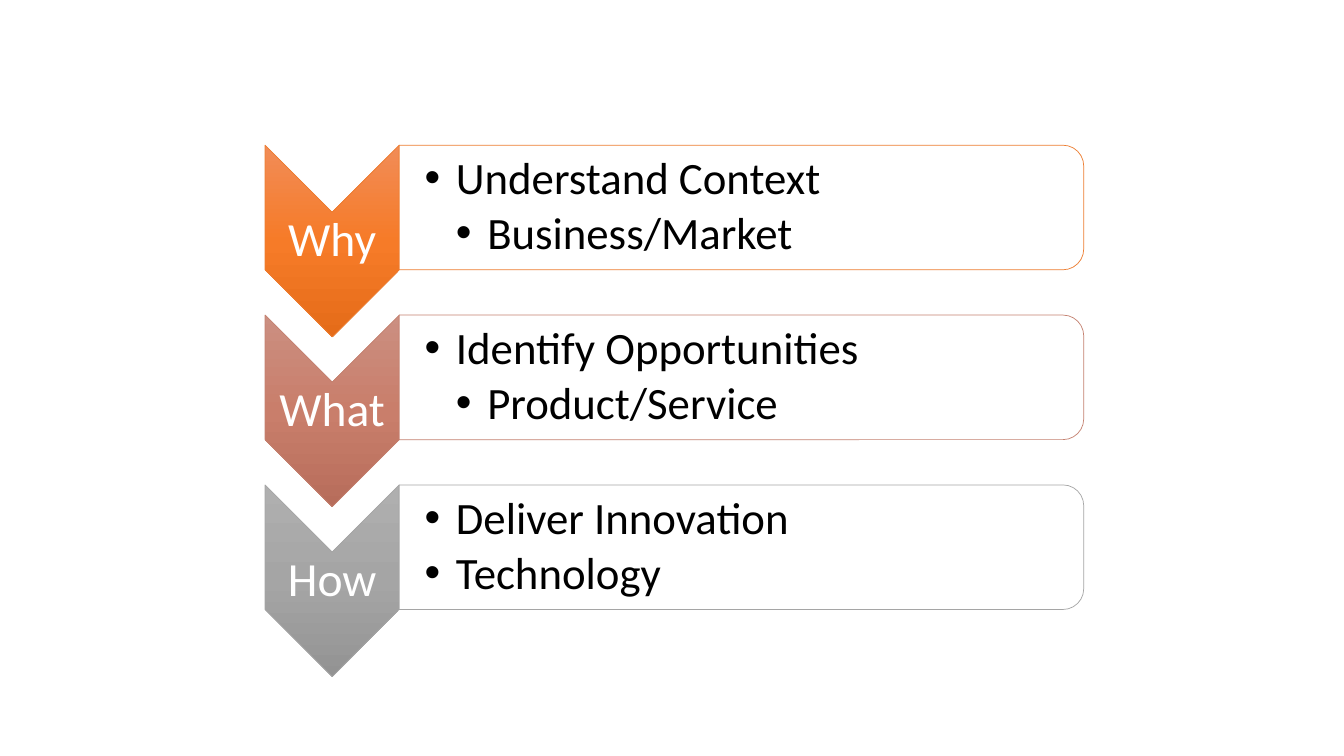
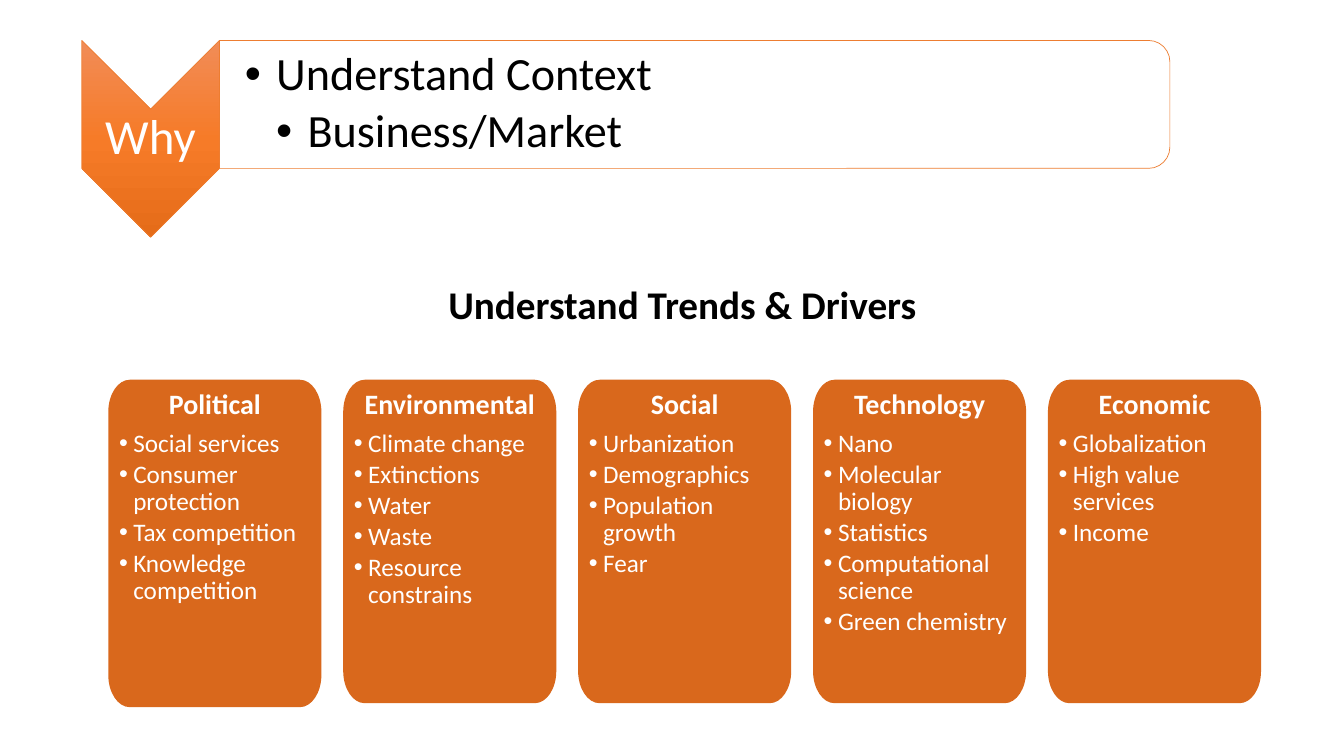
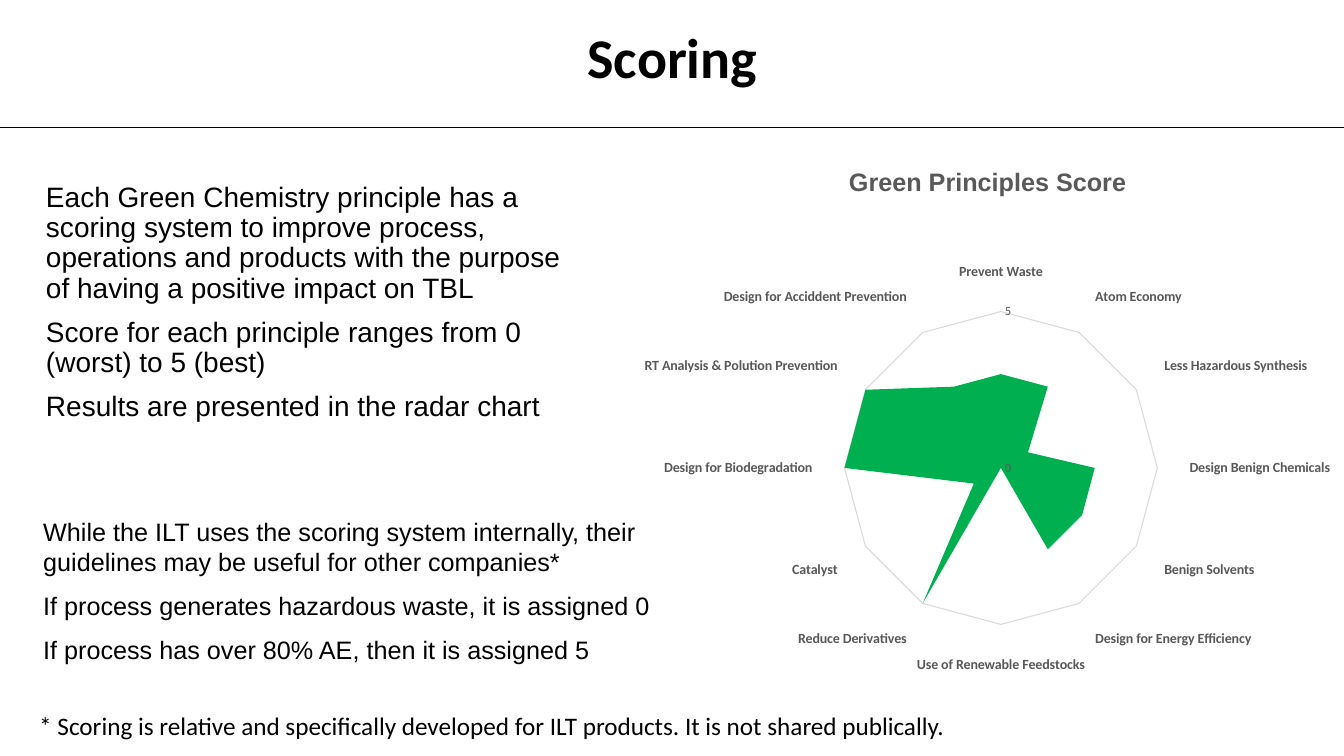
from lxml.etree import SubElement
from pptx import Presentation
from pptx.chart.data import CategoryChartData
from pptx.dml.color import RGBColor
from pptx.enum.chart import XL_CHART_TYPE, XL_TICK_MARK
from pptx.enum.shapes import MSO_CONNECTOR, MSO_SHAPE
from pptx.enum.text import MSO_ANCHOR, PP_ALIGN
from pptx.oxml.ns import qn
from pptx.util import Cm, Pt

WIDTH, HEIGHT = 33.87, 19.05
BLACK, WHITE, GREY, PALE = "000000", "FFFFFF", "595959", "D9D9D9"
CARD, GREEN = "D9681C", "00B050"
ORANGE = ("ED7D31", ("F18C57", "F67B28", "E56C19"))
ROSE = ("C48170", ("CB8F81", "C97E6B", "B76D5B"))
SILVER = ("A5A5A5", ("AFAFAF", "A5A5A5", "939393"))
WHY = ("Why", [("Understand Context", 1), ("Business/Market", 2)], ORANGE)
WHAT = ("What", [("Identify Opportunities", 1), ("Product/Service", 2)], ROSE)
HOW = ("How", [("Deliver Innovation", 1), ("Technology", 1)], SILVER)
TRENDS = {
    "Political": ["Social services", "Consumer protection", "Tax competition",
                  "Knowledge competition"],
    "Environmental": ["Climate change", "Extinctions", "Water", "Waste",
                      "Resource constrains"],
    "Social": ["Urbanization", "Demographics", "Population growth", "Fear"],
    "Technology": ["Nano", "Molecular biology", "Statistics",
                   "Computational science", "Green chemistry"],
    "Economic": ["Globalization", "High value services", "Income"],
}
SCORES = {
    "Prevent Waste": 3,
    "Atom Economy": 3,
    "Less Hazardous Synthesis": 1,
    "Design Benign Chemicals": 3,
    "Benign Solvents": 3,
    "Design for Energy Efficiency": 3,
    "Use of Renewable Feedstocks": 0,
    "Reduce Derivatives": 5,
    "Catalyst": 1,
    "Design for Biodegradation": 5,
    "RT Analysis & Polution Prevention": 5,
    "Design for Acciddent Prevention": 3,
}
PRINCIPLES = [
    "Each Green Chemistry principle has a scoring system to improve process, "
    "operations and products with the purpose of having a positive impact on TBL",
    "Score for each principle ranges from 0 (worst) to 5 (best)",
    "Results are presented in the radar chart",
]
GUIDELINES = [
    "While the ILT uses the scoring system internally, their guidelines may be "
    "useful for other companies*",
    "If process generates hazardous waste, it is assigned 0",
    "If process has over 80% AE, then it is assigned 5",
]


def rgb(value):
    """Turn a hex string into a colour."""
    return RGBColor.from_string(value)


class Deck:
    """Hold the shared style and the current slide."""

    font = "Calibri"

    def __init__(self):
        """Start an empty wide presentation."""
        self.prs = Presentation()
        self.prs.slide_width, self.prs.slide_height = Cm(WIDTH), Cm(HEIGHT)

    def new_slide(self):
        """Add a blank slide and make it current."""
        self.shapes = self.prs.slides.add_slide(self.prs.slide_layouts[6]).shapes

    def style_font(self, font, size, color, bold=False, name=None):
        """Apply face, size, colour and weight to a font."""
        font.name, font.size, font.bold = name or self.font, Pt(size), bold
        font.color.rgb = rgb(color)

    def frame(self, sp, insets=(0.25, 0.13, 0.25, 0.13), anchor=MSO_ANCHOR.TOP, wrap=True):
        """Prepare the text frame of a shape."""
        tf = sp.text_frame
        tf.word_wrap, tf.vertical_anchor = wrap, anchor
        tf.margin_left, tf.margin_top, tf.margin_right, tf.margin_bottom = map(Cm, insets)
        return tf

    def box(self, left, top, width, height, **options):
        """Add a text box and return its frame."""
        sp = self.shapes.add_textbox(Cm(left), Cm(top), Cm(width), Cm(height))
        return self.frame(sp, **options)

    def para(self, tf, text, size, color=BLACK, bold=False, name=None,
             align=PP_ALIGN.LEFT, spacing=1, before=0, after=0):
        """Write the next paragraph of a frame."""
        p = tf.add_paragraph() if tf.text else tf.paragraphs[0]
        p.text, p.alignment, p.line_spacing = text, align, spacing
        p.space_before, p.space_after = Pt(before), Pt(after)
        self.style_font(p.runs[0].font, size, color, bold, name)
        return p

    def bullet(self, tf, text, size, indent, level=1, color=BLACK):
        """Write a bulleted paragraph with a hanging indent."""
        p = self.para(tf, text, size, color, spacing=0.9, after=round(size * 0.15, 1))
        p.level = level
        pPr = p._p.get_or_add_pPr()
        pPr.set("marL", str(Cm(indent * level)))
        pPr.set("indent", str(-Cm(indent)))
        SubElement(pPr, qn("a:buFont")).set("typeface", "Arial")
        SubElement(pPr, qn("a:buChar")).set("char", "•")

    def label(self, tf, text, size, bold=False):
        """Write a centred white heading."""
        self.para(tf, text, size, WHITE, bold, align=PP_ALIGN.CENTER,
                  spacing=0.9, after=round(size * 0.35, 1))

    def turned(self, kind, left, top, width, height, line):
        """Add a shape turned by 90 degrees that fills the given area."""
        x, y = left + (width - height) / 2, top + (height - width) / 2
        sp = self.shapes.add_shape(kind, Cm(x), Cm(y), Cm(height), Cm(width))
        sp.rotation = 90
        sp.shadow.inherit = False
        sp.line.color.rgb, sp.line.width = rgb(line), Pt(0.5)
        return sp

    def gradient(self, sp, colors):
        """Fill a shape from top to bottom with evenly spaced colours."""
        sp.fill.gradient()
        grad = sp.element.spPr.find(qn("a:gradFill"))
        grad.set("rotWithShape", "0")
        grad.find(qn("a:lin")).set("ang", "5400000")
        stops = grad.find(qn("a:gsLst"))
        for stop in list(stops):
            stops.remove(stop)
        for i, color in enumerate(colors):
            stop = SubElement(stops, qn("a:gs"))
            stop.set("pos", str(100000 * i // (len(colors) - 1)))
            SubElement(stop, qn("a:srgbClr")).set("val", color)

    def step(self, left, top, length, panel_width, size, content):
        """Add a chevron with its label and a panel of bullets."""
        name, points, (line, colors) = content
        breadth, height, pad = length * 0.7, length * 0.65, 0.15
        chevron = self.turned(MSO_SHAPE.CHEVRON, left, top, breadth, length, line)
        self.gradient(chevron, colors)
        tf = self.box(left, top + breadth / 2, breadth, length - breadth,
                      insets=[0.05] * 4, anchor=MSO_ANCHOR.MIDDLE)
        self.label(tf, name, size)
        left += breadth
        panel = self.turned(MSO_SHAPE.ROUND_2_SAME_RECTANGLE, left, top,
                            panel_width, height, line)
        panel.fill.solid()
        panel.fill.fore_color.rgb = rgb(WHITE)
        tf = self.box(left, top + pad, panel_width - pad, height - 2 * pad,
                      insets=(0.64, 0.05, 0.05, 0.05), anchor=MSO_ANCHOR.MIDDLE)
        for text, level in points:
            self.bullet(tf, text, size - 2, 0.79, level)

    def rounded(self, left, top, width, height, rx, ry):
        """Add a freeform rectangle with elliptical corners."""
        x, y, w, h, rx, ry = map(Cm, (left, top, width, height, rx, ry))
        points = [(0, ry), (rx, 0), (w - rx, 0), (w, ry),
                  (w, h - ry), (w - rx, h), (rx, h), (0, h - ry)]
        builder = self.shapes.build_freeform(x, y + ry)
        builder.add_line_segments([(x + a, y + b) for a, b in points[1:]], close=True)
        sp = builder.convert_to_shape()
        lines = list(sp.element.iter(qn("a:lnTo")))
        corners = [(0, 0), (w, 0), (w, h), (0, h)]
        for i, corner in enumerate(corners):
            start, end, line = points[2 * i], points[2 * i + 1], lines[2 * i]
            curve = line.makeelement(qn("a:cubicBezTo"))
            for anchor, pull in ((start, 0.55), (end, 0.55), (end, 0)):
                pt = SubElement(curve, qn("a:pt"))
                for key, a, c in zip("xy", anchor, corner):
                    pt.set(key, str(round(a + pull * (c - a))))
            line.getparent().replace(line, curve)
        return sp

    def card(self, left, top, width, height, title, items):
        """Add a card with a heading and bullets."""
        sp = self.rounded(left, top, width, height, 0.54, 0.81)
        sp.shadow.inherit = False
        sp.fill.solid()
        sp.fill.fore_color.rgb = rgb(CARD)
        sp.line.fill.background()
        tf = self.frame(sp, insets=[0.27] * 4)
        self.label(tf, title, 20, True)
        for item in items:
            self.bullet(tf, item, 18, 0.36, color=WHITE)

    def rule(self, top):
        """Draw a thin line across the slide."""
        line = self.shapes.add_connector(MSO_CONNECTOR.STRAIGHT, 0, Cm(top), Cm(WIDTH), Cm(top))
        line.line.color.rgb, line.line.width = rgb(BLACK), Pt(0.5)
        SubElement(line._element.spPr, qn("a:effectLst"))

    def place(self, parent, before, **values):
        """Give a chart part a fixed position in fractions of the chart."""
        for old in parent.findall(qn("c:layout")):
            parent.remove(old)
        layout = SubElement(parent, qn("c:layout"))
        manual = SubElement(layout, qn("c:manualLayout"))
        for key, value in values.items():
            SubElement(manual, qn("c:" + key)).set("val", str(value))
        parent.find(qn(before)).addprevious(layout)

    def radar(self, left, top, width, height, title, scores):
        """Add a filled radar chart of scores from 0 to 5."""
        data = CategoryChartData()
        data.categories = list(scores)
        data.add_series("Series 1", list(scores.values()))
        chart = self.shapes.add_chart(XL_CHART_TYPE.RADAR_FILLED, Cm(left), Cm(top),
                                      Cm(width), Cm(height), data).chart
        self.style_font(chart.font, 10, BLACK)
        chart.has_legend = False
        tf = chart.chart_title.text_frame
        tf.text = title
        self.style_font(tf.paragraphs[0].runs[0].font, 18, GREY, True, "Arial")
        chart.chart_title.include_in_layout = False
        fill = chart.plots[0].series[0].format.fill
        fill.solid()
        fill.fore_color.rgb = rgb(GREEN)
        cats, vals = chart.category_axis, chart.value_axis
        for axis, size, bold in ((cats, 10, True), (vals, 9, False)):
            axis.major_tick_mark = axis.minor_tick_mark = XL_TICK_MARK.NONE
            self.style_font(axis.tick_labels.font, size, GREY, bold)
            axis.has_major_gridlines = True
            for line in (axis.format.line, axis.major_gridlines.format.line):
                line.color.rgb, line.width = rgb(PALE), Pt(0.75)
        vals.format.line.fill.background()
        vals.minimum_scale, vals.maximum_scale, vals.major_unit = 0, 5, 5
        vals.tick_labels.number_format = "General"
        vals.tick_labels.number_format_is_linked = False
        self.place(chart.chart_title._element, "c:overlay",
                   xMode="edge", yMode="edge", x=0.3, y=0.03)
        self.place(chart._chartSpace.chart.plotArea, "c:radarChart", layoutTarget="outer",
                   xMode="edge", yMode="edge", x=0.02, y=0.14, w=0.96, h=0.82)


def main():
    """Build the three slides."""
    s = Deck()

    s.new_slide()
    for row, content in enumerate((WHY, WHAT, HOW)):
        s.step(6.68, 3.66 + 4.28 * row, 4.83, 17.25, 34, content)

    s.new_slide()
    s.step(2.06, 1.02, 4.96, 23.95, 35, WHY)
    for column, (title, items) in enumerate(TRENDS.items()):
        s.card(2.73 + 5.92 * column, 9.57, 5.37, 8.15 if column else 8.25, title, items)
    s.para(s.box(11.05, 6.94, 12.45, 1.45, wrap=False), "Understand Trends & Drivers", 28, bold=True)

    s.new_slide()
    tf = s.box(0.91, 4.49, 14.25, 6.6)
    for text in PRINCIPLES:
        s.para(tf, text, 20, name="Arial", spacing=0.9, before=10)
    s.radar(15.88, 3.61, 18, 14.88, "Green Principles Score", SCORES)
    s.para(s.box(0.74, 17.78, 23.7, 1.02, wrap=False),
           "* Scoring is relative and specifically developed for ILT products. "
           "It is not shared publically.", 18)
    s.rule(3.2)
    s.para(s.box(14.52, 0.43, 4.85, 1.96, wrap=False), "Scoring", 40, bold=True,
           align=PP_ALIGN.CENTER)
    tf = s.box(0.84, 12.87, 16.23, 4.8)
    for text in GUIDELINES:
        s.para(tf, text, 18, name="Arial", before=10)

    s.prs.save("out.pptx")


if __name__ == "__main__":
    main()
